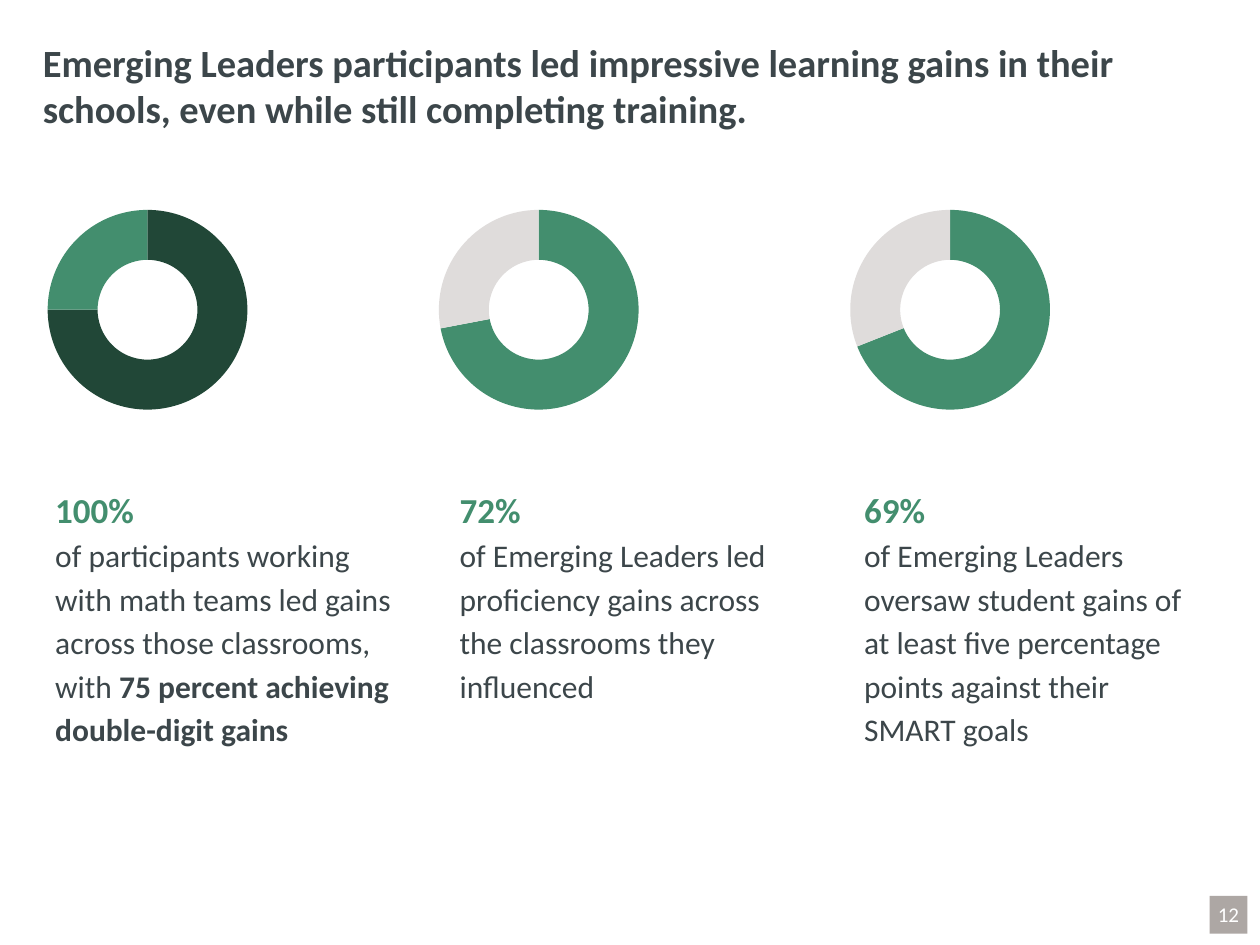
import pptx
import pptx.chart.data
import pptx.dml.color
import pptx.enum.chart
import pptx.enum.shapes
import pptx.enum.text
import pptx.oxml
import pptx.util
from pptx.oxml.ns import nsdecls

INK, GREEN, FOREST = "3C464A", "438E6E", "214737"
PALE, GREY, WHITE = "DFDCDB", "ADA7A4", "FFFFFF"

LAYOUT = (
    f'<c:layout {nsdecls("c")}><c:manualLayout><c:layoutTarget val="inner"/>'
    '<c:xMode val="edge"/><c:yMode val="edge"/>'
    '<c:x val="0.106"/><c:y val="0.066"/><c:w val="0.96"/><c:h val="0.901"/>'
    '</c:manualLayout></c:layout>')


def color(value):
    return pptx.dml.color.RGBColor.from_string(value)


class Deck:
    """Style and current slide; lengths are in cells of a 100 x 75 grid."""

    font = "Calibri"
    cols, rows = 100, 75

    def __init__(self, width, height):
        self.prs = pptx.Presentation()
        self.prs.slide_width = pptx.util.Inches(width)
        self.prs.slide_height = pptx.util.Inches(height)
        self.s = self.prs.slides.add_slide(self.prs.slide_layouts[6])

    def box(self, x, y, w, h):
        dx = self.prs.slide_width / self.cols
        dy = self.prs.slide_height / self.rows
        return [round(v) for v in (x * dx, y * dy, w * dx, h * dy)]

    def rect(self, at, fill):
        sp = self.s.shapes.add_shape(
            pptx.enum.shapes.MSO_SHAPE.RECTANGLE, *self.box(*at))
        sp.shadow.inherit = False
        sp.fill.solid()
        sp.fill.fore_color.rgb = color(fill)
        sp.line.fill.background()

    def text(self, at, lines, align="LEFT", spacing=None, after=None, inset=0.1):
        """Each line is a list of (text, size, colour, bold) runs."""
        tf = self.s.shapes.add_textbox(*self.box(*at)).text_frame
        tf.word_wrap = True
        tf.margin_left = pptx.util.Inches(inset)
        p = tf.paragraphs[0]
        p.alignment = getattr(pptx.enum.text.PP_ALIGN, align)
        p.line_spacing = spacing
        if after is not None:
            p.space_after = pptx.util.Pt(after)
        for i, line in enumerate(lines):
            if i:
                p.add_line_break()
            for words, size, ink, bold in line:
                r = p.add_run()
                r.text = words
                r.font.name = self.font
                r.font.size = pptx.util.Pt(size)
                r.font.color.rgb = color(ink)
                r.font.bold = bold

    def doughnut(self, at, share, fills):
        data = pptx.chart.data.CategoryChartData()
        data.categories = ["1", "2"]
        data.add_series("Series 1", (share, 100 - share))
        chart = self.s.shapes.add_chart(
            pptx.enum.chart.XL_CHART_TYPE.DOUGHNUT, *self.box(*at), data).chart
        chart.has_legend = False
        chart.has_title = False
        chart.font.name = self.font
        chart.font.size = pptx.util.Pt(18)
        chart.font.color.rgb = color(INK)
        plot = chart.plots[0]
        plot.vary_by_categories = True
        for i, fill in enumerate(fills):
            fmt = plot.series[0].points[i].format
            fmt.fill.solid()
            fmt.fill.fore_color.rgb = color(fill)
            fmt.line.fill.background()
        # Hole size and plot position
        area = chart._chartSpace.chart.plotArea
        for hole in area.xpath(".//c:holeSize"):
            hole.set("val", "53")
        for old in area.xpath("./c:layout"):
            area.remove(old)
        area.insert(0, pptx.oxml.parse_xml(LAYOUT))


def main():
    deck = Deck(10, 7.5)

    # Page number
    deck.rect((96, 71.1, 3, 3), GREY)
    deck.text((95, 71.1, 5, 3), [[("12", 12, WHITE, False)]], align="CENTER")

    # Title
    deck.text((3.4, 2.6, 93.1, 4.7), [[(
        "Emerging Leaders participants led impressive learning gains in their "
        "schools, even while still completing training.", 22, INK, True)]],
        inset=0)

    # Results: chart left, chart width, share, fills, headline, text, bold ending
    results = [
        (1, 20.6, 75, (FOREST, GREEN), "100%",
         "of participants working with math teams led gains across those "
         "classrooms, with ", "75 percent achieving double-digit gains"),
        (33.4, 18, 72, (GREEN, PALE), "72%",
         "of Emerging Leaders led proficiency gains across the classrooms "
         "they influenced", ""),
        (66.1, 17.9, 69, (GREEN, PALE), "69%",
         "of Emerging Leaders oversaw student gains of at least five "
         "percentage points against their SMART goals", ""),
    ]
    for i, (x, w, share, fills, head, body, ending) in enumerate(results):
        deck.doughnut((x, 15.5, w, 17.6), share, fills)
        words = [(body, 18, INK, False)]
        if ending:
            words.append((ending, 18, INK, True))
        deck.text((3.4 + 32.1 * i, 37.8, 29, 22.1),
                  [[(head, 20, GREEN, True)], words], spacing=1.15, after=12)

    deck.prs.save("out.pptx")


if __name__ == "__main__":
    main()
